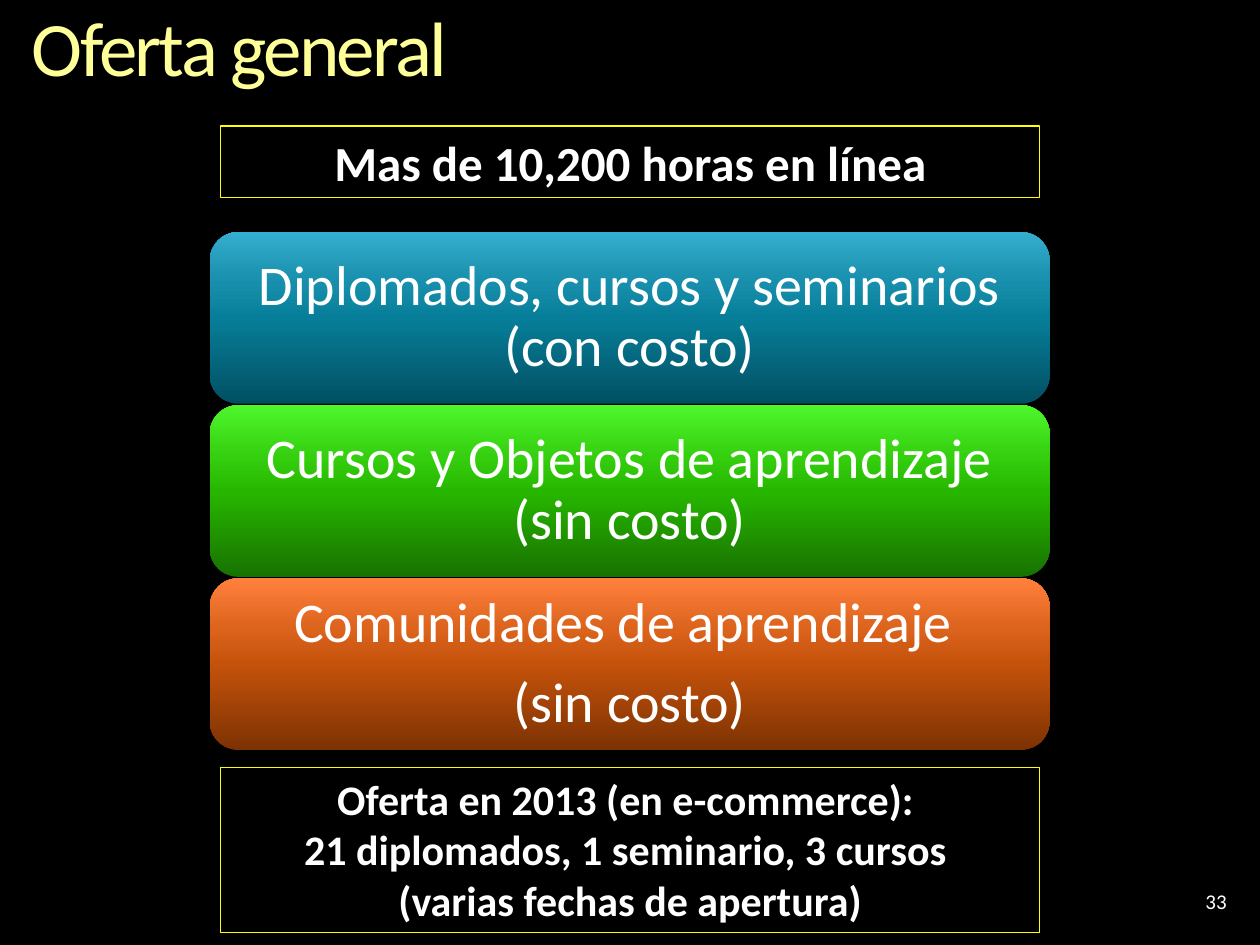
from dataclasses import dataclass

from lxml import etree
from pptx import Presentation
from pptx.dml.color import RGBColor
from pptx.enum.shapes import MSO_SHAPE
from pptx.enum.text import MSO_ANCHOR, PP_ALIGN
from pptx.oxml.ns import qn
from pptx.util import Cm, Pt

RECT, ROUND = MSO_SHAPE.RECTANGLE, MSO_SHAPE.ROUNDED_RECTANGLE
TOP, MIDDLE = MSO_ANCHOR.TOP, MSO_ANCHOR.MIDDLE
LEFT, CENTER, RIGHT = PP_ALIGN.LEFT, PP_ALIGN.CENTER, PP_ALIGN.RIGHT


@dataclass(frozen=True)
class Theme:
    font: str = "Calibri"
    back: str = "000000"
    text: str = "FFFFFF"
    title: str = "FFFF99"
    edge: str = "FFFF00"
    blue: tuple = ("015062", "077E99", "178EAB", "35ADCE")
    green: tuple = ("187200", "27B700", "35CF0F", "4EF62C")
    orange: tuple = ("7D3203", "C4520B", "DB631C", "FF803C")
    stops: tuple = (0, 50, 70, 100)
    head: int = 44
    band: int = 32
    lead: int = 28
    note: int = 24
    page: int = 12


THEME = Theme()


def rgb(code):
    return RGBColor.from_string(code)


def assign(item, values):
    for name, value in values.items():
        setattr(item, name, value)


def write(shape, lines, size, color=THEME.text, bold=False, align=CENTER,
          anchor=TOP, inset=None, space=None, after=None):
    frame = shape.text_frame
    assign(frame, {"word_wrap": True, "vertical_anchor": anchor})
    if inset is not None:
        sides = ("left", "right", "top", "bottom")
        assign(frame, {f"margin_{side}": Cm(inset) for side in sides})
    for i, line in enumerate(lines):
        para = frame.paragraphs[0] if i == 0 else frame.add_paragraph()
        assign(para, {"alignment": align, "line_spacing": space,
                      "space_after": after})
        run = para.add_run()
        run.text = line
        assign(run.font, {"name": THEME.font, "size": Pt(size), "bold": bold})
        run.font.color.rgb = rgb(color)
    return frame


def shade(shape, colors):
    grad = etree.Element(qn("a:gradFill"), rotWithShape="1")
    stops = etree.SubElement(grad, qn("a:gsLst"))
    for place, color in zip(THEME.stops, colors):
        stop = etree.SubElement(stops, qn("a:gs"), pos=str(place * 1000))
        etree.SubElement(stop, qn("a:srgbClr"), val=color)
    etree.SubElement(grad, qn("a:lin"), ang=str(270 * 60000), scaled="0")
    shape.fill.background()
    old = shape._element.spPr.find(qn("a:noFill"))
    old.getparent().replace(old, grad)


def add_band(slide, top, lines, colors):
    band = slide.shapes.add_shape(ROUND, Cm(4.23), Cm(top), Cm(16.93), Cm(3.46))
    band.shadow.inherit = False
    band.line.fill.background()
    shade(band, colors)
    write(band, lines, THEME.band, anchor=MIDDLE, inset=0.34,
          space=0.9, after=Pt(11.2))


def add_frame(slide, top, height, lines, size):
    box = slide.shapes.add_shape(RECT, Cm(4.45), Cm(top), Cm(16.51), Cm(height))
    box.shadow.inherit = False
    box.fill.background()
    box.line.color.rgb = rgb(THEME.edge)
    box.line.width = Pt(0.75)
    write(box, lines, size, bold=True)


def add_text(slide, place, lines, size, **style):
    box = slide.shapes.add_textbox(*map(Cm, place))
    return write(box, lines, size, **style)


def main():
    deck = Presentation()
    assign(deck, {"slide_width": Cm(25.4), "slide_height": Cm(19.05)})
    slide = deck.slides.add_slide(deck.slide_layouts[6])
    slide.background.fill.solid()
    slide.background.fill.fore_color.rgb = rgb(THEME.back)

    bands = (
        (["Diplomados, cursos y seminarios (con costo)"], THEME.blue),
        (["Cursos y Objetos de aprendizaje (sin costo)"], THEME.green),
        (["Comunidades de aprendizaje ", "(sin costo)"], THEME.orange),
    )
    for i, (lines, colors) in enumerate(bands):
        add_band(slide, 4.68 + i * 3.49, lines, colors)

    add_frame(slide, 2.54, 1.45, ["Mas de 10,200 horas en línea"], THEME.lead)
    head = add_text(slide, (0.64, 0.2, 23.29, 1.7), ["Oferta general"],
                    THEME.head, color=THEME.title, align=LEFT, inset=0, space=0.9)
    head.paragraphs[0].runs[0].font._element.set("spc", "-150")
    add_text(slide, (19.05, 17.65, 5.93, 1.02), ["33"], THEME.page,
             align=RIGHT, anchor=MIDDLE)
    add_frame(slide, 15.47, 3.33, [
        "Oferta en 2013 (en e-commerce): ",
        "21 diplomados, 1 seminario, 3 cursos ",
        "(varias fechas de apertura)",
    ], THEME.note)
    deck.save("out.pptx")


if __name__ == "__main__":
    main()
